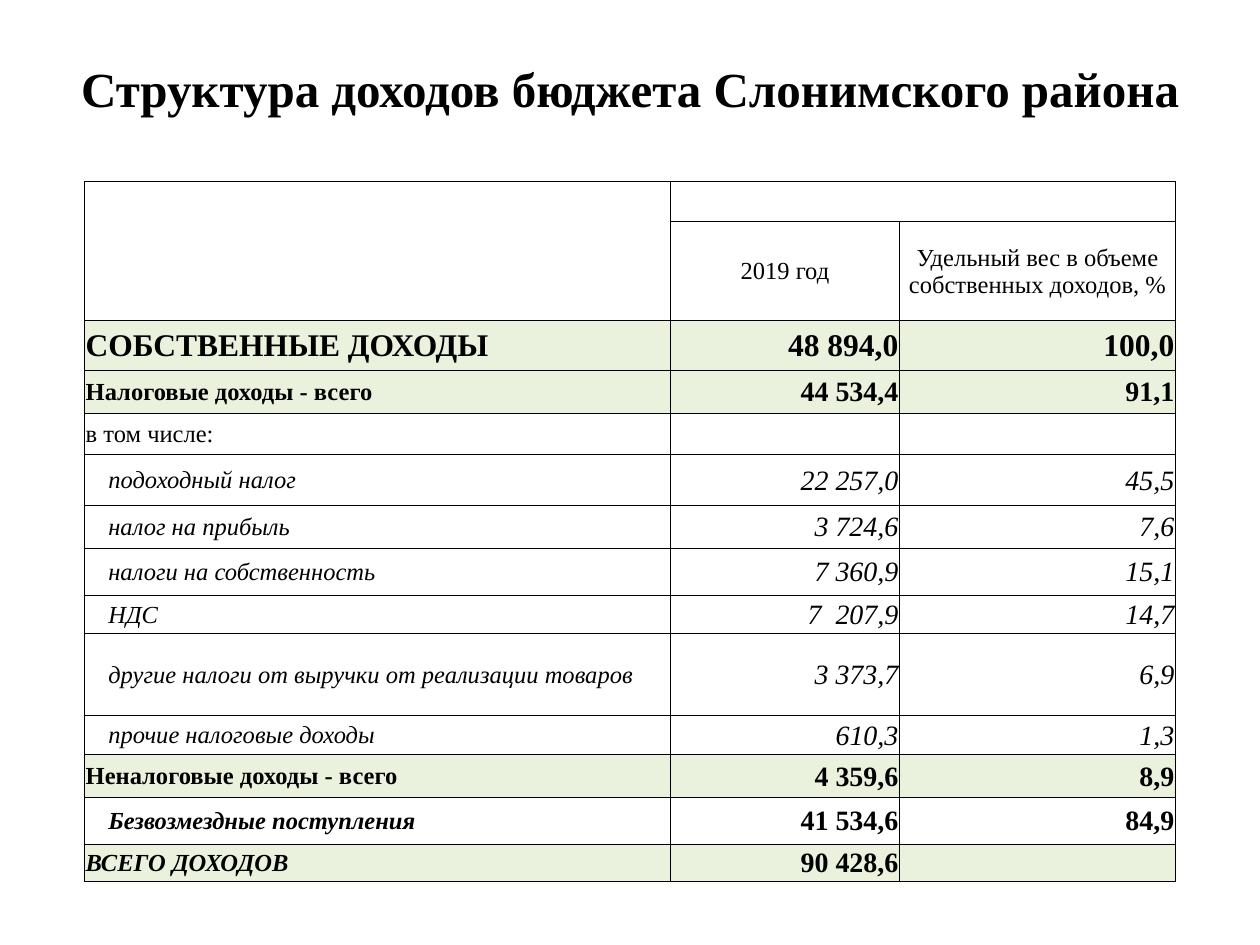
import pptx
import pptx.util
import pptx.dml.color
import pptx.enum.text
import pptx.oxml
import pptx.oxml.ns
from lxml import etree

Inches = pptx.util.Inches
Align = pptx.enum.text.PP_ALIGN
Middle = pptx.enum.text.MSO_ANCHOR.MIDDLE

COLORS = {"ink": "000000", "band": "EAF1DD"}
FONT = "Times New Roman"
COLS = [4.65, 1.82, 2.19]
HEIGHTS = [0.29, 0.32, 0.78, 0.4, 0.34, 0.33, 0.4, 0.34,
           0.38, 0.3, 0.65, 0.31, 0.34, 0.37, 0.3]
TITLE = "Структура доходов бюджета Слонимского района"
HEADS = ["2019 год", "Удельный вес в объеме собственных доходов, %"]

# Label format, number format, left inset, filled band
HEAD = ({"size": 18, "bold": True}, {"size": 18, "bold": True}, 0.01, True)
GROUP = ({"bold": True}, {"size": 16, "bold": True}, 0.01, True)
PLAIN = ({}, {}, 0.01, False)
ITEM = ({"italic": True}, {"size": 16, "italic": True}, 0.19, False)
GRANT = ({"bold": True, "italic": True}, {"size": 16, "bold": True}, 0.19, False)
TOTAL = ({"bold": True, "italic": True}, {"size": 16, "bold": True}, 0.01, True)

ROWS = [
    (HEAD, "СОБСТВЕННЫЕ ДОХОДЫ", "48 894,0", "100,0"),
    (GROUP, "Налоговые доходы - всего", "44 534,4", "91,1"),
    (PLAIN, "в том числе:", "", ""),
    (ITEM, "подоходный налог", "22 257,0", "45,5"),
    (ITEM, "налог на прибыль", "3 724,6", "7,6"),
    (ITEM, "налоги на собственность", "7 360,9", "15,1"),
    (ITEM, "НДС", "7  207,9", "14,7"),
    (ITEM, "другие налоги от выручки от реализации товаров", "3 373,7", "6,9"),
    (ITEM, "прочие налоговые доходы", "610,3", "1,3"),
    (GROUP, "Неналоговые доходы - всего", "4 359,6", "8,9"),
    (GRANT, "Безвозмездные поступления", "41 534,6", "84,9"),
    (TOTAL, "ВСЕГО ДОХОДОВ", "90 428,6", ""),
]


def color(name):
    return pptx.dml.color.RGBColor.from_string(COLORS[name])


def write(frame, text, size=14, bold=False, italic=False, align=Align.LEFT):
    """Set the text; an empty one only gets a small line height."""
    para = frame.paragraphs[0]
    para.alignment = align
    if not text:
        end = etree.SubElement(para._p, pptx.oxml.ns.qn("a:endParaRPr"))
        end.set("sz", "1000")
        return
    run = para.add_run()
    run.text = text
    font = run.font
    font.name, font.size = FONT, pptx.util.Pt(size)
    font.bold, font.italic = bold, italic
    font.color.rgb = color("ink")


def border(cell, shown):
    """Draw the named sides of a cell and clear the others."""
    props = cell._tc.get_or_add_tcPr()
    for spot, side in enumerate("LRTB"):
        fill = (f'<a:solidFill><a:srgbClr val="{COLORS["ink"]}"/></a:solidFill>'
                if side in shown else "<a:noFill/>")
        line = pptx.oxml.parse_xml(
            f'<a:ln{side} {pptx.oxml.ns.nsdecls("a")} w="6350">{fill}</a:ln{side}>')
        props.insert(spot, line)


class Page:
    def __init__(self, deck):
        self.slide = deck.slides.add_slide(deck.slide_layouts[5])

    def title(self, text, left, top, width, height):
        shape = self.slide.shapes.title
        shape.left, shape.top = Inches(left), Inches(top)
        shape.width, shape.height = Inches(width), Inches(height)
        shape.text_frame.vertical_anchor = Middle
        write(shape.text_frame, text, size=28, bold=True, align=Align.CENTER)

    def grid(self, left, top):
        """Add the bare table: an open first row, then ruled cells."""
        table = self.slide.shapes.add_table(
            len(HEIGHTS), len(COLS), Inches(left), Inches(top),
            Inches(sum(COLS)), Inches(sum(HEIGHTS))).table
        table.first_row = table.horz_banding = False
        for col, width in zip(table.columns, COLS):
            col.width = Inches(width)
        for num, (row, height) in enumerate(zip(table.rows, HEIGHTS)):
            row.height = Inches(height)
            for cell in row.cells:
                cell.fill.background()
                border(cell, "LRTB" if num else "B")
        return table

    def cell(self, cell, text, inset=0.01, band=False, **style):
        cell.margin_left = Inches(inset)
        cell.margin_top = cell.margin_right = Inches(0.01)
        cell.margin_bottom = 0
        cell.vertical_anchor = Middle
        if band:
            cell.fill.solid()
            cell.fill.fore_color.rgb = color("band")
        write(cell.text_frame, text, **style)

    def budget(self, left, top):
        table = self.grid(left, top)
        heads = [["", "", ""], ["", "", ""], ["", *HEADS]]
        for num, texts in enumerate(heads):
            for col, text in enumerate(texts):
                self.cell(table.cell(num, col), text, align=Align.CENTER)
        table.cell(1, 0).merge(table.cell(2, 0))
        table.cell(1, 1).merge(table.cell(1, 2))
        for num, (kind, label, *values) in enumerate(ROWS, len(heads)):
            name, digits, inset, band = kind
            align = Align.LEFT if num < 7 else Align.JUSTIFY
            self.cell(table.cell(num, 0), label, inset, band, align=align, **name)
            for col, value in enumerate(values, 1):
                self.cell(table.cell(num, col), value, band=band,
                          align=Align.RIGHT, **digits)


def main():
    deck = pptx.Presentation()
    deck.slide_width, deck.slide_height = Inches(10), Inches(7.5)
    page = Page(deck)
    page.title(TITLE, 0.5, 0.3, 9, 0.79)
    page.budget(0.67, 1.15)
    deck.save("out.pptx")


if __name__ == "__main__":
    main()
